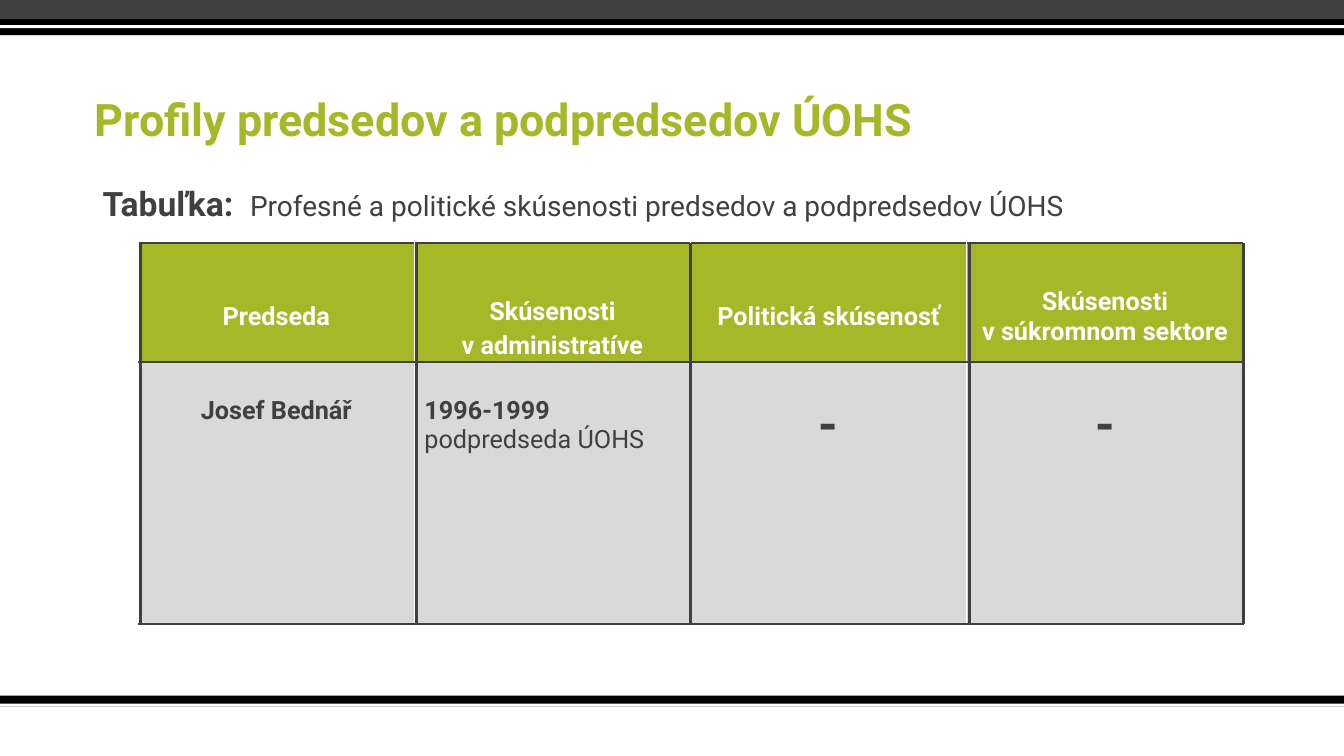
import pptx
import pptx.dml.color
import pptx.enum.shapes
import pptx.enum.text
import pptx.oxml
import pptx.oxml.ns
import pptx.util

Inches = pptx.util.Inches
Pt = pptx.util.Pt
ALIGN = pptx.enum.text.PP_ALIGN
ANCHOR = pptx.enum.text.MSO_ANCHOR

FONT = "Roboto"
COLORS = {"green": "A6B727", "dark": "404040", "gray": "D9D9D9",
          "black": "000000", "white": "FFFFFF"}
SLIDE_W = 13.33
TABLE_X, TABLE_Y = 1.37, 2.41
COL_W = 2.74
ROW_HEIGHTS = [1.18, 2.6]
RULE_XS = [1.39, 4.13, 6.85, 9.62, 12.33]

HEADERS = ["Predseda", "Skúsenosti v\u00a0administratíve",
           "Politická skúsenosť", "Skúsenosti v\u00a0súkromnom sektore"]


def rgb(name):
    return pptx.dml.color.RGBColor.from_string(COLORS[name])


def add_run(p, text, size=18, color="dark", bold=True):
    r = p.add_run()
    r.text = text
    r.font.name = FONT
    r.font.size = Pt(size)
    r.font.bold = bold
    r.font.color.rgb = rgb(color)


def add_band(s, y, h, color):
    sp = s.shapes.add_shape(pptx.enum.shapes.MSO_SHAPE.RECTANGLE,
                            0, Inches(y), Inches(SLIDE_W), Inches(h))
    sp.shadow.inherit = False
    sp.fill.solid()
    sp.fill.fore_color.rgb = rgb(color)
    sp.line.fill.background()


def add_text(s, x, y, w, h, anchor):
    """Add a wrapping text box and return its first paragraph."""
    tf = s.shapes.add_textbox(Inches(x), Inches(y), Inches(w), Inches(h)).text_frame
    tf.word_wrap = True
    tf.vertical_anchor = anchor
    p = tf.paragraphs[0]
    p.line_spacing = 0.9
    return p


def set_horizontal_borders(cell):
    tc_pr = cell._tc.get_or_add_tcPr()
    for i, tag in enumerate(["lnT", "lnB"]):
        ln = pptx.oxml.parse_xml(
            f'<a:{tag} {pptx.oxml.ns.nsdecls("a")} w="{Pt(2)}"><a:solidFill>'
            f'<a:srgbClr val="{COLORS["dark"]}"/></a:solidFill></a:{tag}>')
        tc_pr.insert(i, ln)


def format_cell(cell, fill, align, anchor):
    """Style a cell whose text starts lower than its top edge; return its paragraph."""
    cell.fill.solid()
    cell.fill.fore_color.rgb = rgb(fill)
    cell.vertical_anchor = anchor
    cell.margin_top = Inches(0.34)
    set_horizontal_borders(cell)
    p = cell.text_frame.paragraphs[0]
    p.alignment = align
    return p


def add_profile_table(s):
    table = s.shapes.add_table(
        len(ROW_HEIGHTS), len(HEADERS), Inches(TABLE_X), Inches(TABLE_Y),
        Inches(COL_W * len(HEADERS)), Inches(sum(ROW_HEIGHTS))).table
    for col in table.columns:
        col.width = Inches(COL_W)
    for row, h in zip(table.rows, ROW_HEIGHTS):
        row.height = Inches(h)

    for i, text in enumerate(HEADERS):
        p = format_cell(table.cell(0, i), "green", ALIGN.CENTER, ANCHOR.MIDDLE)
        add_run(p, text, color="white")
    admin = table.cell(0, 1)
    admin.margin_left = admin.margin_right = Inches(0.07)
    admin.margin_top, admin.margin_bottom = Inches(0.48), 0
    admin.text_frame.paragraphs[0].line_spacing = 1.15

    aligns = [ALIGN.CENTER, ALIGN.LEFT, ALIGN.CENTER, ALIGN.CENTER]
    name, career, politics, private = [
        format_cell(table.cell(1, i), "gray", align, ANCHOR.TOP)
        for i, align in enumerate(aligns)]
    add_run(name, "Josef Bednář")
    add_run(career, "1996-1999 ")
    add_run(career, "podpredseda ÚOHS", bold=False)
    for p in (politics, private):
        add_run(p, "-", size=36)


def add_column_rule(s, x):
    cx = s.shapes.add_connector(
        pptx.enum.shapes.MSO_CONNECTOR.STRAIGHT, Inches(x), Inches(TABLE_Y),
        Inches(x), Inches(TABLE_Y + sum(ROW_HEIGHTS)))
    cx.line.color.rgb = rgb("dark")
    cx.line.width = Pt(2.25)
    cx._element.spPr.append(pptx.oxml.parse_xml(
        f'<a:effectLst {pptx.oxml.ns.nsdecls("a")}/>'))


def main():
    prs = pptx.Presentation()
    prs.slide_width, prs.slide_height = Inches(SLIDE_W), Inches(7.5)
    s = prs.slides.add_slide(prs.slide_layouts[6])

    for y, h, color in [(6.9, 0.11, "black"), (6.98, 0.03, "white"),
                        (0, 0.19, "dark"), (0.19, 0.16, "black"),
                        (0.25, 0.03, "white")]:
        add_band(s, y, h, color)

    title = add_text(s, 0.84, 0.6, 10.83, 0.9, ANCHOR.BOTTOM)
    add_run(title, "Profily predsedov a\u00a0podpredsedov ÚOHS", size=32, color="green")
    caption = add_text(s, 0.92, 1.81, 10.75, 0.5, ANCHOR.TOP)
    add_run(caption, "Tabuľka:  ", size=24)
    add_run(caption, "Profesné a\u00a0politické skúsenosti predsedov "
            "a\u00a0podpredsedov ÚOHS", size=20, bold=False)

    add_profile_table(s)
    for x in RULE_XS:
        add_column_rule(s, x)
    prs.save("out.pptx")


if __name__ == "__main__":
    main()
